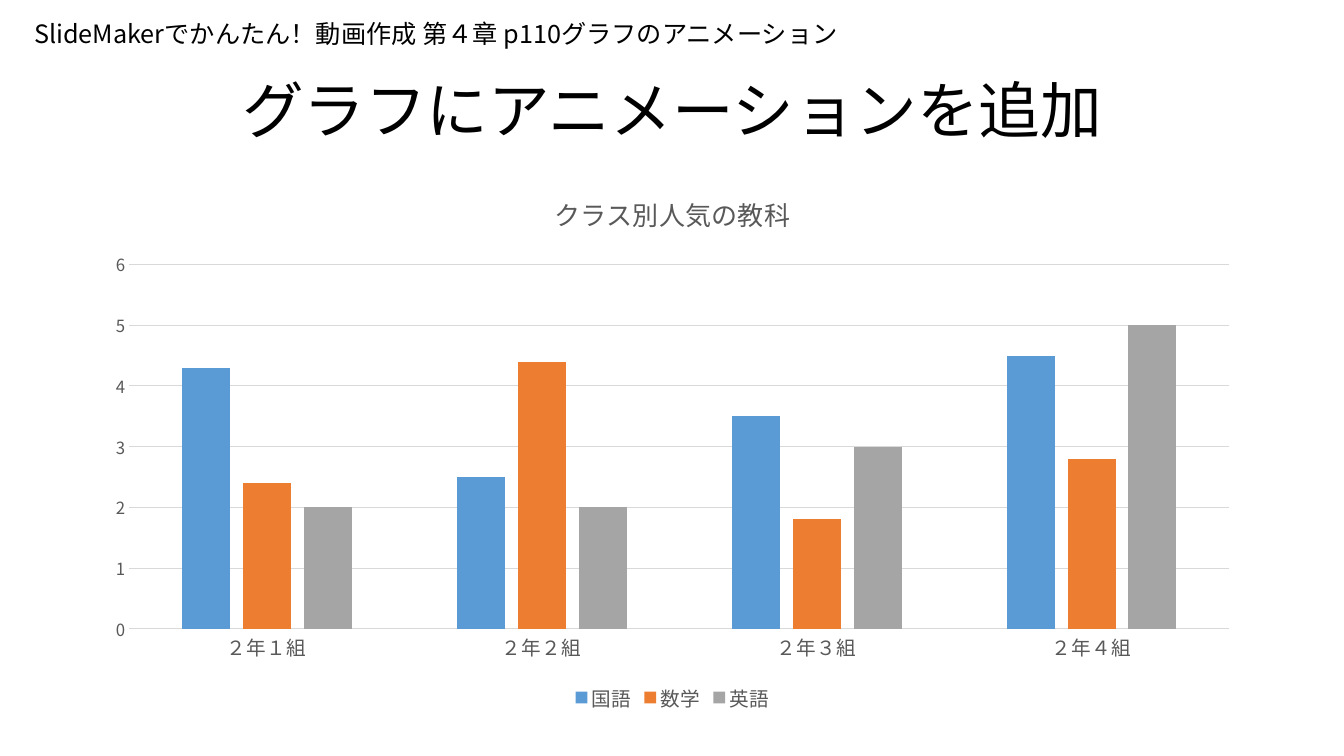
from pptx import Presentation
from pptx.chart.data import CategoryChartData
from pptx.dml.color import RGBColor
from pptx.enum.chart import XL_CHART_TYPE as ChartType
from pptx.enum.chart import XL_LEGEND_POSITION as LegendPosition
from pptx.enum.chart import XL_TICK_MARK as TickMark
from pptx.enum.text import MSO_ANCHOR, MSO_AUTO_SIZE, PP_ALIGN
from pptx.oxml.ns import qn
from pptx.util import Inches, Pt

FONT = "Noto Sans CJK JP"
BLACK, GREY, LIGHT_GREY = "000000", "595959", "D9D9D9"
CLASSES = ["２年１組", "２年２組", "２年３組", "２年４組"]
SUBJECTS = [
    ("国語", "5B9BD5", (4.3, 2.5, 3.5, 4.5)),
    ("数学", "ED7D31", (2.4, 4.4, 1.8, 2.8)),
    ("英語", "A5A5A5", (2, 2, 3, 5)),
]


def rgb(color):
    return RGBColor.from_string(color)


def style_font(font, size, color):
    font.name = FONT
    font.size = Pt(size)
    font.bold = False
    font.color.rgb = rgb(color)


def style_line(line, color):
    line.color.rgb = rgb(color)
    line.width = Pt(0.75)


def use_font_for_japanese(element):
    """Give every run with a Latin typeface the same East Asian typeface."""
    for latin in list(element.iter(qn("a:latin"))):
        east_asian = latin.makeelement(qn("a:ea"), {"typeface": FONT})
        latin.addnext(east_asian)


def place(shape, left, top, width, height):
    shape.left, shape.top = Inches(left), Inches(top)
    shape.width, shape.height = Inches(width), Inches(height)


def add_title(slide, text):
    title = slide.shapes.title
    place(title, 0.92, 0.4, 11.5, 1.45)
    frame = title.text_frame
    frame.text = text
    frame.vertical_anchor = MSO_ANCHOR.MIDDLE
    paragraph = frame.paragraphs[0]
    paragraph.alignment = PP_ALIGN.CENTER
    paragraph.line_spacing = 0.9
    style_font(paragraph.runs[0].font, 44, BLACK)


def add_chapter_label(slide, text):
    label = slide.shapes.add_textbox(
        Inches(0.24), Inches(0.13), Inches(9.52), Inches(0.4))
    frame = label.text_frame
    frame.word_wrap = True
    frame.auto_size = MSO_AUTO_SIZE.SHAPE_TO_FIT_TEXT
    frame.text = text
    style_font(frame.paragraphs[0].runs[0].font, 18, BLACK)


def style_axes(chart):
    category_axis, value_axis = chart.category_axis, chart.value_axis
    for axis, size in ((category_axis, 14), (value_axis, 12)):
        axis.major_tick_mark = axis.minor_tick_mark = TickMark.NONE
        style_font(axis.tick_labels.font, size, GREY)
    style_line(category_axis.format.line, LIGHT_GREY)
    value_axis.format.line.fill.background()
    value_axis.minimum_scale, value_axis.maximum_scale = 0, 6
    value_axis.major_unit = 1
    style_line(value_axis.major_gridlines.format.line, LIGHT_GREY)


def add_subject_chart(slide, title):
    data = CategoryChartData()
    data.categories = CLASSES
    for name, _, values in SUBJECTS:
        data.add_series(name, values)
    chart = slide.shapes.add_chart(
        ChartType.COLUMN_CLUSTERED, Inches(0.92), Inches(1.7),
        Inches(11.5), Inches(5.4), data).chart
    style_font(chart.font, 10, BLACK)

    chart.has_title = True
    chart.chart_title.include_in_layout = False
    frame = chart.chart_title.text_frame
    frame.text = title
    style_font(frame.paragraphs[0].runs[0].font, 18.6, GREY)

    chart.has_legend = True
    chart.legend.position = LegendPosition.BOTTOM
    chart.legend.include_in_layout = False
    style_font(chart.legend.font, 14, GREY)

    style_axes(chart)
    plot = chart.plots[0]
    plot.gap_width, plot.overlap = 219, -27
    plot.vary_by_categories = False
    for series, (_, color, _) in zip(plot.series, SUBJECTS):
        series.format.fill.solid()
        series.format.fill.fore_color.rgb = rgb(color)
    use_font_for_japanese(chart.element)


def main():
    presentation = Presentation()
    presentation.slide_width = Inches(13.33)
    presentation.slide_height = Inches(7.5)
    slide = presentation.slides.add_slide(presentation.slide_layouts[5])
    add_title(slide, "グラフにアニメーションを追加")
    add_subject_chart(slide, "クラス別人気の教科")
    add_chapter_label(
        slide, "SlideMakerでかんたん！動画作成 第４章 p110グラフのアニメーション")
    use_font_for_japanese(slide.element)
    presentation.save("out.pptx")


if __name__ == "__main__":
    main()
